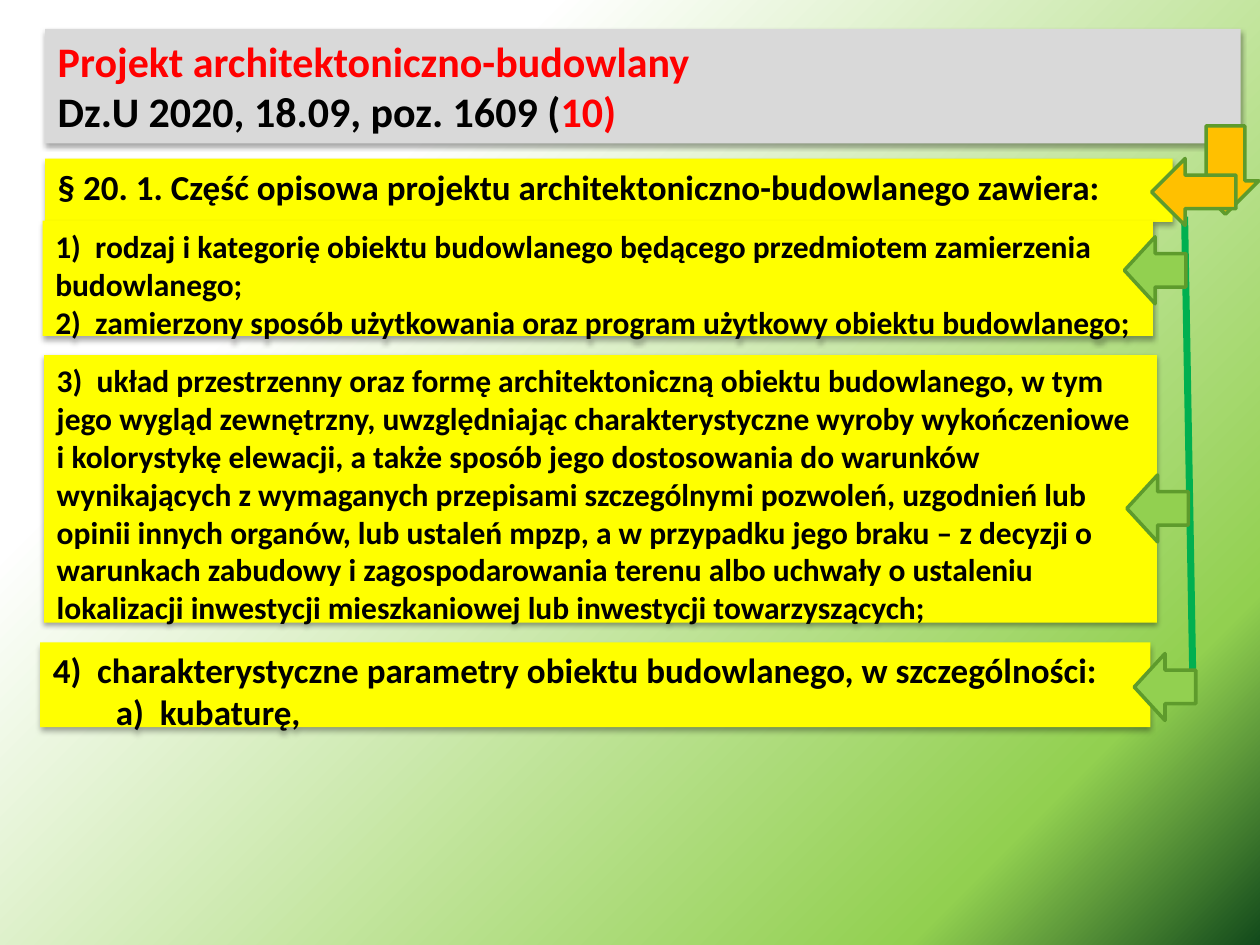
from dataclasses import dataclass

from pptx import Presentation
from pptx import oxml
from pptx.dml import color
from pptx.enum import shapes, text as layout
from pptx.oxml import ns
from pptx.util import Cm, Pt


@dataclass(frozen=True)
class Theme:
    font: str = "Calibri"
    heading: int = 24
    lead: int = 20
    item: int = 18
    black: str = "000000"
    red: str = "FF0000"
    grey: str = "D9D9D9"
    yellow: str = "FFFF00"
    orange: str = "FFC000"
    light_green: str = "92D050"
    dark_green: str = "124A1B"
    outline: str = "5E9B2C"
    rail: str = "00B050"
    white: str = "FFFFFF"


theme = Theme()
rgb = color.RGBColor.from_string


def write(para, text, size, ink=theme.black, indent=0):
    properties = para._p.get_or_add_pPr()
    properties.set("marL", str(Cm(indent)))
    properties.set("indent", "0")
    if properties.find(ns.qn("a:buNone")) is None:
        oxml.parse_xml
        properties.append(oxml.parse_xml(f"<a:buNone {ns.nsdecls('a')}/>"))
    para.alignment = layout.PP_ALIGN.LEFT
    para.space_before = para.space_after = Pt(0)
    para.line_spacing = 1.0
    span = para.add_run()
    span.text = text
    span.font.name = theme.font
    span.font.size = Pt(size)
    span.font.bold = True
    span.font.color.rgb = rgb(ink)


def place(box, frame, fill):
    box.left, box.top, box.width, box.height = [Cm(length) for length in frame]
    box.fill.solid()
    box.fill.fore_color.rgb = rgb(fill)
    box.shadow.inherit = False


deck = Presentation()
deck.slide_width, deck.slide_height = Cm(25.4), Cm(19.05)
page = deck.slides.add_slide(deck.slide_layouts.get_by_name("Comparison"))

page.background.fill.solid()
background = page._element.find(".//" + ns.qn("p:bgPr"))
stops = "".join(
    f'<a:gs pos="{position * 1000}"><a:srgbClr val="{shade}"/></a:gs>'
    for position, shade in [(0, theme.dark_green), (16, theme.light_green), (75, theme.white)]
)
background.replace(background[0], oxml.parse_xml(
    f'<a:gradFill {ns.nsdecls("a")} rotWithShape="1"><a:gsLst>{stops}</a:gsLst>'
    '<a:path path="circle"><a:fillToRect l="100000" t="100000"/></a:path></a:gradFill>'
))

panels = [
    ((0.91, 0.58, 24.1, 2.31), theme.grey, theme.heading, [
        [("Projekt architektoniczno-budowlany", {"ink": theme.red})],
        [("Dz.U 2020, 18.09, poz. 1609 (", {}), ("10)", {"ink": theme.red})],
    ]),
    ((0.91, 3.2, 22.73, 1.12), theme.yellow, theme.lead, [
        [("§ 20. 1. Część opisowa projektu architektoniczno-budowlanego zawiera:", {})],
    ]),
    ((0.86, 4.45, 22.38, 2.57), theme.yellow, theme.item, [
        [("1)  rodzaj i kategorię obiektu budowlanego będącego przedmiotem "
          "zamierzenia budowlanego;", {})],
        [("2)  zamierzony sposób użytkowania oraz program użytkowy obiektu budowlanego;", {})],
    ]),
    ((0.89, 7.16, 22.43, 5.64), theme.yellow, theme.item, [
        [("3)  układ przestrzenny oraz formę architektoniczną obiektu budowlanego, "
          "w tym jego wygląd zewnętrzny, uwzględniając charakterystyczne wyroby "
          "wykończeniowe i kolorystykę elewacji, a także sposób jego dostosowania do "
          "warunków wynikających z wymaganych przepisami szczególnymi pozwoleń, "
          "uzgodnień lub opinii innych organów, lub ustaleń mpzp, a w przypadku jego "
          "braku – z decyzji o warunkach zabudowy i zagospodarowania terenu albo "
          "uchwały o ustaleniu lokalizacji inwestycji mieszkaniowej lub inwestycji "
          "towarzyszących;", {})],
    ]),
    ((0.81, 12.95, 22.38, 1.96), theme.yellow, theme.lead, [
        [("4)  charakterystyczne parametry obiektu budowlanego, w szczególności:", {})],
        [("a)  kubaturę,", {"indent": 1.27})],
    ]),
]

for box, (frame, fill, size, lines) in zip(page.placeholders, panels):
    place(box, frame, fill)
    box._element.spPr.find(ns.qn("a:effectLst")).append(oxml.parse_xml(
        f'<a:outerShdw {ns.nsdecls("a")} blurRad="{Pt(3.1)}" dist="{Pt(1.8)}" dir="5400000" '
        f'rotWithShape="0"><a:srgbClr val="{theme.black}"><a:alpha val="35000"/></a:srgbClr>'
        "</a:outerShdw>"
    ))
    body = box.text_frame
    body.word_wrap = True
    body.auto_size = layout.MSO_AUTO_SIZE.SHAPE_TO_FIT_TEXT
    body.vertical_anchor = layout.MSO_ANCHOR.TOP
    for number, line in enumerate(lines):
        para = body.add_paragraph() if number else body.paragraphs[0]
        for text, options in line:
            write(para, text, size, **options)

rail = page.shapes.add_connector(
    shapes.MSO_CONNECTOR.STRAIGHT, Cm(23.88), Cm(4.37), Cm(24.05), Cm(13.94)
)
rail.line.color.rgb = rgb(theme.rail)
rail.line.width = Pt(4)
rail._element.spPr.append(oxml.parse_xml(f"<a:effectLst {ns.nsdecls('a')}/>"))

arrows = [
    ((24.03, 2.54, 1.35, 1.78), 0, theme.orange, 0.58),
    ((23.39, 3.02, 1.35, 1.7), 90, theme.orange, 0.5),
    ((22.61, 4.83, 1.35, 1.24), 90, theme.light_green, 0.5),
    ((22.66, 9.63, 1.35, 1.24), 90, theme.light_green, 0.5),
    ((22.81, 13.23, 1.35, 1.24), 90, theme.light_green, 0.5),
]
for frame, turn, fill, shaft in arrows:
    arrow = page.shapes.add_shape(shapes.MSO_SHAPE.DOWN_ARROW, 0, 0, 0, 0)
    place(arrow, frame, fill)
    arrow.rotation = turn
    arrow.adjustments[0] = shaft
    arrow.line.color.rgb = rgb(theme.outline)
    arrow.line.width = Pt(2)

deck.save("out.pptx")
